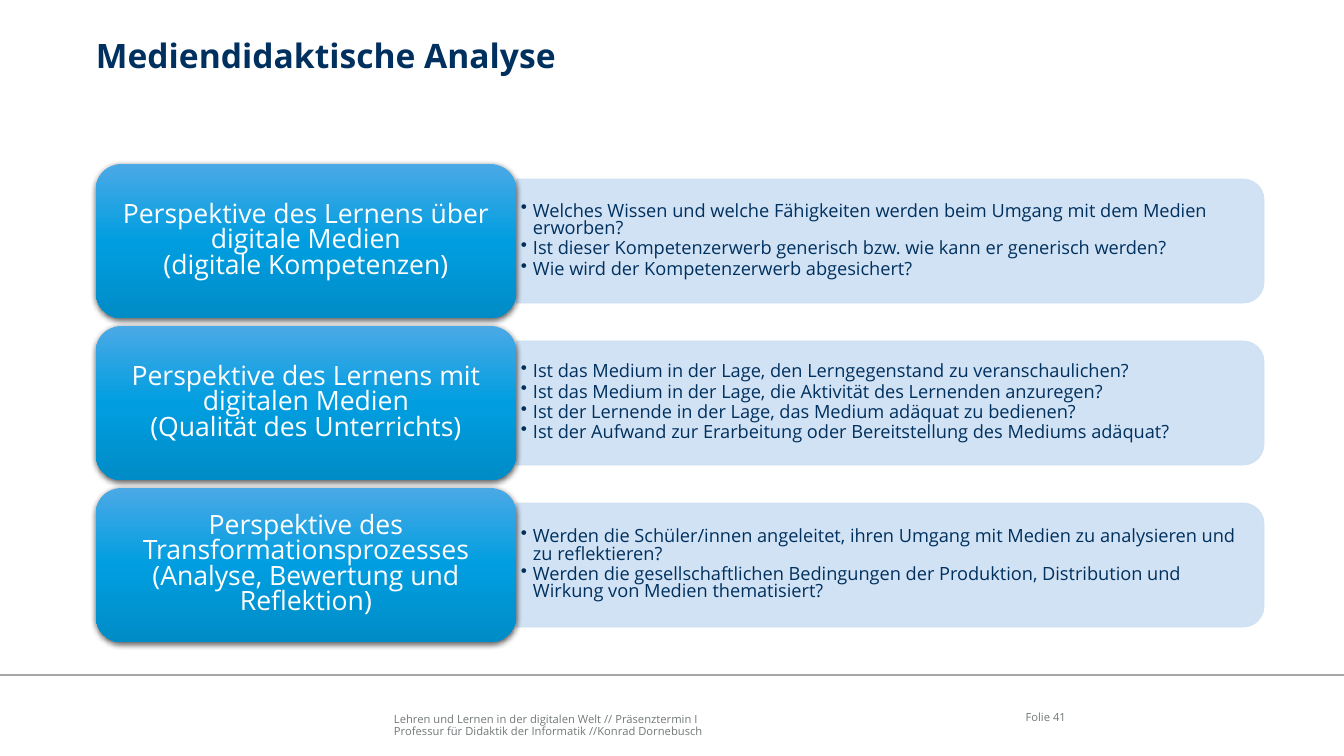
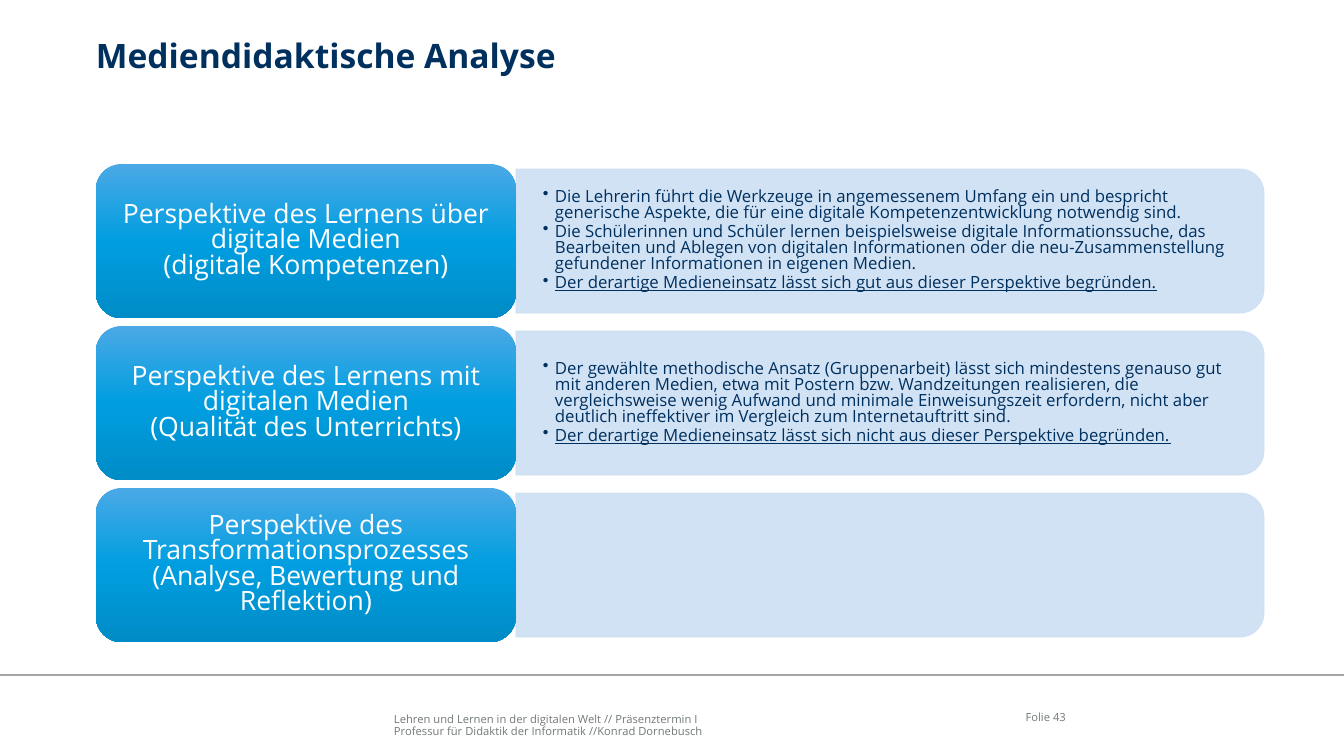
from lxml import etree
from copy import deepcopy
from pptx import Presentation
from pptx import util as u
from pptx.dml.color import RGBColor
from pptx.enum import shapes, text
from pptx.oxml import ns

NAVY = RGBColor(0x00, 0x30, 0x5E)
PALE = RGBColor(0xCC, 0xDF, 0xF3)
GREY = RGBColor(0x72, 0x78, 0x79)
RULE = RGBColor(0xA6, 0xA6, 0xA6)
WHITE = RGBColor(0xFF, 0xFF, 0xFF)
PILL_STOPS = [
    (0, RGBColor(0x4B, 0xA9, 0xE6)),
    (0.5, RGBColor(0x00, 0x9E, 0xE0)),
    (1, RGBColor(0x00, 0x8C, 0xC7)),
]
FONT = "Open Sans"
SCALE = 9072
WIDTH, HEIGHT = 1344, 756
LEFT, TOP, PITCH = 96, 164, 162
PILL_WIDTH, PILL_HEIGHT = 420, 154
PANEL_LEFT, PANEL_WIDTH = LEFT + PILL_WIDTH, 748

TITLE = "Mediendidaktische Analyse"
FOOTER = [
    "Lehren und Lernen in der digitalen Welt // Präsenztermin I",
    "Professur für Didaktik der Informatik //Konrad Dornebusch",
]
PERSPECTIVES = [
    ("Perspektive des Lernens über digitale Medien", "(digitale Kompetenzen)"),
    ("Perspektive des Lernens mit digitalen Medien", "(Qualität des Unterrichts)"),
    ("Perspektive des Transformationsprozesses", "(Analyse, Bewertung und Reflektion)"),
]
QUESTIONS = [
    [
        "Welches Wissen und welche Fähigkeiten werden beim Umgang mit dem Medien erworben?",
        "Ist dieser Kompetenzerwerb generisch bzw. wie kann er generisch werden?",
        "Wie wird der Kompetenzerwerb abgesichert?",
    ],
    [
        "Ist das Medium in der Lage, den Lerngegenstand zu veranschaulichen?",
        "Ist das Medium in der Lage, die Aktivität des Lernenden anzuregen?",
        "Ist der Lernende in der Lage, das Medium adäquat zu bedienen?",
        "Ist der Aufwand zur Erarbeitung oder Bereitstellung des Mediums adäquat?",
    ],
    [
        "Werden die Schüler/innen angeleitet, ihren Umgang mit Medien zu analysieren und zu reflektieren?",
        "Werden die gesellschaftlichen Bedingungen der Produktion, Distribution und Wirkung von Medien thematisiert?",
    ],
]
ANSWERS = [
    [
        "Die Lehrerin führt die Werkzeuge in angemessenem Umfang ein und bespricht generische Aspekte, die für eine digitale Kompetenzentwicklung notwendig sind.",
        "Die Schülerinnen und Schüler lernen beispielsweise digitale Informationssuche, das Bearbeiten und Ablegen von digitalen Informationen oder die neu-Zusammenstellung gefundener Informationen in eigenen Medien.",
        "Der derartige Medieneinsatz lässt sich gut aus dieser Perspektive begründen.",
    ],
    [
        "Der gewählte methodische Ansatz (Gruppenarbeit) lässt sich mindestens genauso gut mit anderen Medien, etwa mit Postern bzw. Wandzeitungen realisieren, die vergleichsweise wenig Aufwand und minimale Einweisungszeit erfordern, nicht aber deutlich ineffektiver im Vergleich zum Internetauftritt sind.",
        "Der derartige Medieneinsatz lässt sich nicht aus dieser Perspektive begründen.",
    ],
    [],
]


def px(*lengths):
    return [u.Emu(round(length * SCALE)) for length in lengths]


def child(parent, tag, **attributes):
    names = {name: str(value) for name, value in attributes.items()}
    return etree.SubElement(parent, ns.qn(tag), names)


class Builder:
    def __init__(self):
        self.deck = Presentation()
        self.deck.slide_width, self.deck.slide_height = px(WIDTH, HEIGHT)
        self.page = None

    def start(self, number):
        self.page = self.deck.slides.add_slide(self.deck.slide_layouts[5])
        self.title()
        self.rule(675)
        self.note(394, 710, 572, 28, FOOTER)
        self.note(988, 708, 78, 16, [f"Folie {number}"], text.PP_ALIGN.RIGHT)

    def span(self, para, words, size, colour, bold=False, underline=False):
        span = para.add_run()
        span.text = words
        span.font.name = FONT
        span.font.size = u.Pt(size)
        span.font.color.rgb = colour
        span.font.bold = bold
        span.font.underline = underline

    def frame(self, box, anchor, across=0, down=0):
        frame = box.text_frame
        frame.word_wrap = True
        frame.auto_size = text.MSO_AUTO_SIZE.NONE
        frame.vertical_anchor = anchor
        frame.margin_left, frame.margin_right = px(across, across)
        frame.margin_top, frame.margin_bottom = px(down, down)
        return frame

    def paras(self, frame, lines):
        for index, line in enumerate(lines):
            yield (frame.add_paragraph() if index else frame.paragraphs[0]), line

    def title(self):
        box = self.page.shapes.title
        box.left, box.top, box.width, box.height = px(LEFT, 38, 1166, 76)
        para = self.frame(box, text.MSO_ANCHOR.TOP).paragraphs[0]
        para.alignment = text.PP_ALIGN.LEFT
        para.line_spacing = 0.95
        self.span(para, TITLE, 24, NAVY, bold=True)

    def rule(self, top):
        line = self.page.shapes.add_connector(
            shapes.MSO_CONNECTOR.STRAIGHT, *px(0, top, WIDTH, top))
        line.line.color.rgb = RULE
        line.line.width = u.Pt(1)
        child(line._element.spPr, "a:effectLst")

    def note(self, left, top, width, height, lines, align=text.PP_ALIGN.LEFT):
        box = self.page.shapes.add_textbox(*px(left, top, width, height))
        frame = self.frame(box, text.MSO_ANCHOR.BOTTOM)
        for para, line in self.paras(frame, lines):
            para.alignment = align
            para.line_spacing = 0.92
            self.span(para, line, 8, GREY)

    def panel(self, middle, height):
        centre = PANEL_LEFT + PANEL_WIDTH / 2
        panel = self.page.shapes.add_shape(
            shapes.MSO_SHAPE.ROUND_2_SAME_RECTANGLE,
            *px(centre - height / 2, middle - PANEL_WIDTH / 2, height, PANEL_WIDTH))
        panel.rotation = 90
        panel.shadow.inherit = False
        panel.fill.solid()
        panel.fill.fore_color.rgb = PALE
        panel.line.color.rgb = PALE
        panel.line.width = u.Pt(0.5)
        for colour in list(panel._element.spPr.iter(ns.qn("a:srgbClr"))):
            child(colour, "a:alpha", val=90000)

    def bullets(self, middle, height, lines, size, across, down, conclude):
        box = self.page.shapes.add_textbox(
            *px(PANEL_LEFT, middle - height / 2, PANEL_WIDTH - 7, height))
        frame = self.frame(box, text.MSO_ANCHOR.MIDDLE, across, down)
        for para, line in self.paras(frame, lines):
            para.line_spacing = 0.8
            para.space_after = u.Pt(2)
            indent = px(12)[0]
            properties = para._p.get_or_add_pPr()
            properties.set("marL", str(indent))
            properties.set("indent", str(-indent))
            child(properties, "a:buChar", char="•")
            self.span(para, line, size, NAVY, underline=conclude and line == lines[-1])

    def pill(self, top, lines, shadow):
        pill = self.page.shapes.add_shape(
            shapes.MSO_SHAPE.ROUNDED_RECTANGLE, *px(LEFT, top, PILL_WIDTH, PILL_HEIGHT))
        pill.shadow.inherit = False
        pill.line.fill.background()
        pill.fill.gradient()
        pill.fill.gradient_angle = 270
        stops = pill._element.spPr.find(".//" + ns.qn("a:gsLst"))
        stops.append(deepcopy(stops[0]))
        for stop, (position, colour) in zip(pill.fill.gradient_stops, PILL_STOPS):
            stop.position = position
            stop.color.rgb = colour
        if shadow:
            effects = pill._element.spPr.find(ns.qn("a:effectLst"))
            outer = child(effects, "a:outerShdw", blurRad=u.Pt(4.5), dist=u.Pt(1.5),
                          dir=5400000, rotWithShape=0)
            child(child(outer, "a:srgbClr", val="000000"), "a:alpha", val=63000)
        para = self.frame(pill, text.MSO_ANCHOR.MIDDLE, 8, 4).paragraphs[0]
        para.alignment = text.PP_ALIGN.CENTER
        para.line_spacing = 0.8
        heading, detail = lines
        self.span(para, heading, 19, WHITE)
        para.add_line_break()
        self.span(para, detail, 19, WHITE)

    def analysis(self, number, rows, panel_height, size, across, down,
                 shadow=False, conclude=False):
        self.start(number)
        for index, (label, lines) in enumerate(zip(PERSPECTIVES, rows)):
            top = TOP + index * PITCH
            middle = top + PILL_HEIGHT / 2
            self.panel(middle, panel_height)
            if lines:
                self.bullets(middle, panel_height - 12, lines, size, across, down, conclude)
            self.pill(top, label, shadow)


def main():
    builder = Builder()
    builder.analysis(41, QUESTIONS, 124, 13, 5, 3, shadow=True)
    builder.analysis(43, ANSWERS, 144, 12, 27, 14, conclude=True)
    builder.deck.save("out.pptx")


if __name__ == "__main__":
    main()
